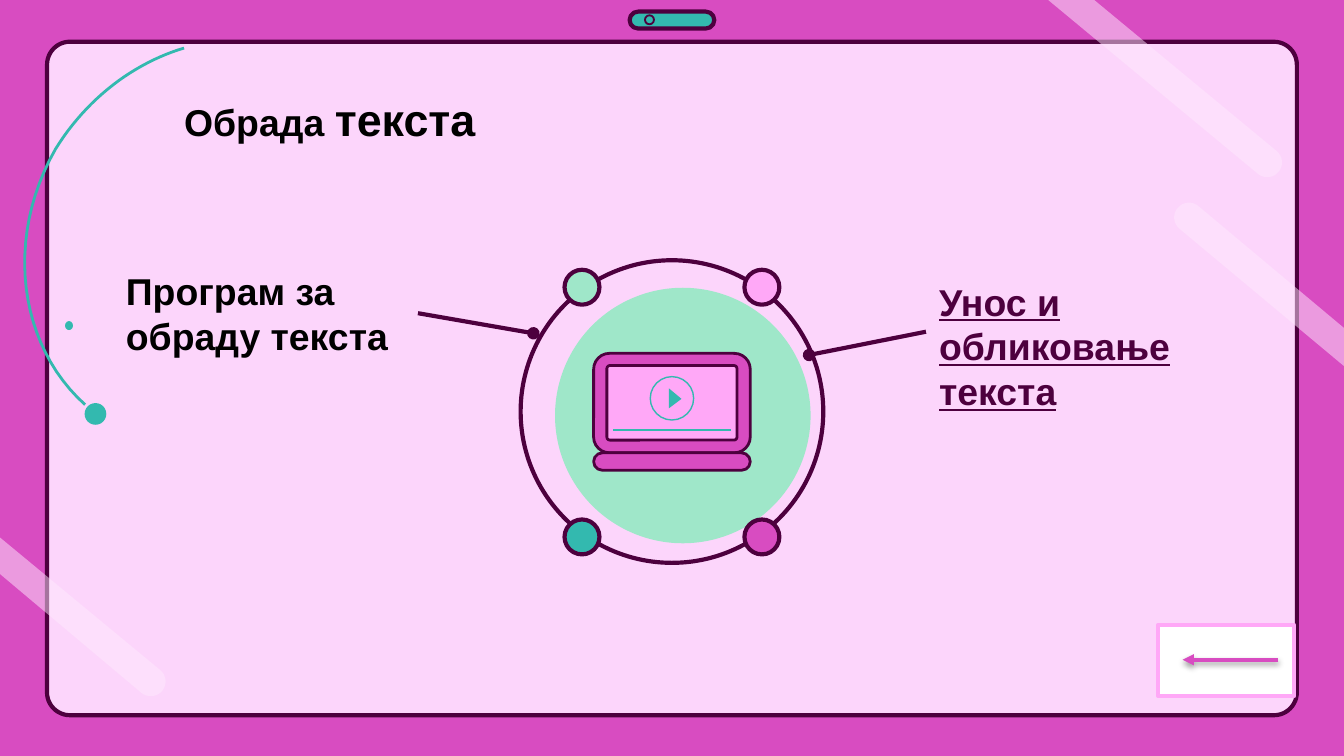
from math import atan2, cos, pi, sin

from lxml.etree import SubElement
from pptx import Presentation
from pptx.dml.color import RGBColor
from pptx.enum.shapes import MSO_CONNECTOR, MSO_SHAPE
from pptx.enum.text import MSO_ANCHOR, MSO_AUTO_SIZE, PP_ALIGN
from pptx.oxml.ns import qn
from pptx.util import Cm, Pt


class Theme:
    font = "Arial"
    body, large = 20, 24
    magenta, pale, pink = "D84CC1", "FCD5FB", "FFA8F7"
    plum, teal, mint = "4D003E", "33B9AF", "9FE7C9"
    glow, white, black = "FFE9FE", "FFFFFF", "000000"
    thin, medium, button, bold = 0.75, 1.5, 2, 2.25


# Content: all lengths in cm
SLIDE = (25.4, 14.29)
ROUND, OVAL, RECT = MSO_SHAPE.ROUNDED_RECTANGLE, MSO_SHAPE.OVAL, MSO_SHAPE.RECTANGLE

# Rows: preset, box, fill, line colour, line width, corner
WINDOW = [
    (ROUND, (0.89, 0.79, 23.62, 12.73), Theme.pale, Theme.plum, Theme.bold, 0.034),
    (ROUND, (11.9, 0.22, 1.6, 0.32), Theme.teal, Theme.plum, Theme.bold, 0.5),
    (OVAL, (12.19, 0.29, 0.17, 0.17), None, Theme.plum, 1, None),
    (OVAL, (1.23, 6.07, 0.15, 0.17), Theme.teal, None, 0, None),
    (OVAL, (1.6, 7.62, 0.41, 0.41), Theme.teal, None, 0, None),
]
EMBLEM = [
    (OVAL, (10.49, 5.44, 4.83, 4.83), Theme.mint, None, 0, None),
    (OVAL, (9.84, 4.92, 5.72, 5.72), None, Theme.plum, Theme.bold, None),
    (ROUND, (11.22, 6.68, 2.96, 1.88), Theme.magenta, Theme.plum, Theme.medium, 0.16),
    (ROUND, (11.47, 6.91, 2.46, 1.41), Theme.pink, Theme.plum, Theme.medium, 0.04),
    (OVAL, (12.29, 7.12, 0.82, 0.82), None, Theme.teal, Theme.thin, None),
    (ROUND, (11.22, 8.56, 2.96, 0.33), Theme.magenta, Theme.plum, Theme.medium, 0.5),
]
BACK_BUTTON = (RECT, (21.89, 11.81, 2.57, 1.35), Theme.white, Theme.pink, Theme.button, None)
PLAY_MARK = [(12.64, 7.34), (12.64, 7.72), (12.88, 7.54)]

# Corner dots around the ring, row by row
DOT_SIZE, DOT_CENTRE, DOT_REACH = 0.66, (12.7, 7.79), (1.7, 2.36)
DOT_FILLS = [[Theme.mint, Theme.pink], [Theme.teal, Theme.magenta]]

# Two Bezier pieces of the orbit
ORBIT = [
    [(3.48, 0.91), (2.54, 1.19), (1.65, 1.85), (1.05, 2.82)],
    [(1.05, 2.82), (0.08, 4.52), (0.36, 6.53), (1.61, 7.65)],
]

# Light streaks: first edge point, cap centre, last edge point
STREAK_RADIUS = 0.28
STREAKS = [
    ((19.81, 0), (23.95, 3.07), (20.68, 0)),
    ((0, 10.85), (2.85, 12.88), (0, 10.16)),
    ((25.4, 6.2), (22.47, 4.11), (25.4, 6.92)),
]

PROGRAM = ((2.13, 5.03, 5.77, 1.78), [("Програм за обраду текста", Theme.body)])
EDITING = ((17.5, 5.36, 5.77, 2.36), [("Унос и обликовање текста", Theme.body)])
TITLE = ((3.23, 1.6, 15.54, 1.27), [("Обрада ", Theme.body), ("текста", Theme.large)])

presentation = Presentation()
presentation.slide_width, presentation.slide_height = map(Cm, SLIDE)
slide = presentation.slides.add_slide(presentation.slide_layouts[6])
slide.background.fill.solid()
slide.background.fill.fore_color.rgb = RGBColor.from_string(Theme.magenta)


def paint(shape, fill, line, width):
    shape.shadow.inherit = False
    for part, colour in ((shape.fill, fill), (shape.line.fill, line)):
        if colour:
            part.solid()
            part.fore_color.rgb = RGBColor.from_string(colour)
        else:
            part.background()
    if line:
        shape.line.width = Pt(width)
    return shape


def add_preset(preset, box, fill, line, width, corner):
    shape = slide.shapes.add_shape(preset, *map(Cm, box))
    if corner is not None:
        shape.adjustments[0] = corner
    return paint(shape, fill, line, width)


def add_outline(points, fill=None, line=None, width=0):
    corners = [(Cm(x), Cm(y)) for x, y in points]
    builder = slide.shapes.build_freeform(*corners[0])
    builder.add_line_segments(corners[1:], close=fill is not None)
    return paint(builder.convert_to_shape(), fill, line, width)


def add_line(start, end, colour, width, tail=None):
    line = slide.shapes.add_connector(MSO_CONNECTOR.STRAIGHT, *map(Cm, start + end))
    line.line.color.rgb = RGBColor.from_string(colour)
    line.line.width = Pt(width)
    if tail:
        SubElement(line.line._get_or_add_ln(), qn("a:tailEnd"), type=tail)
    SubElement(line._element.spPr, qn("a:effectLst"))
    return line


def add_text(box, runs, inset=None, **look):
    holder = slide.shapes.add_textbox(*map(Cm, box))
    frame = holder.text_frame
    frame.word_wrap = True
    if inset:
        frame.vertical_anchor = MSO_ANCHOR.MIDDLE
        for side in ("left", "right", "top", "bottom"):
            setattr(frame, f"margin_{side}", Cm(inset))
    for words, size in runs:
        run = frame.paragraphs[0].add_run()
        run.text = words
        colour = look.get("colour", Theme.black)
        run.font.color.rgb = RGBColor.from_string(colour)
        formats = {"name": Theme.font, "size": Pt(size), "bold": True,
                   "underline": look.get("underline")}
        for key, value in formats.items():
            setattr(run.font, key, value)
    return holder


def bezier(a, b, c, d, steps=24):
    for t in (step / steps for step in range(steps + 1)):
        u = 1 - t
        yield tuple(u**3 * p + 3 * u * u * t * q + 3 * u * t * t * r + t**3 * s
                    for p, q, r, s in zip(a, b, c, d))


def streak_points(first, cap, last, steps=16):
    heading = atan2(cap[1] - (first[1] + last[1]) / 2, cap[0] - (first[0] + last[0]) / 2)
    angles = [heading + pi / 2 - pi * step / steps for step in range(steps + 1)]
    arc = [(cap[0] + STREAK_RADIUS * cos(a), cap[1] + STREAK_RADIUS * sin(a)) for a in angles]
    return [first, *arc, last]


# Window, orbit and light streaks
for row in WINDOW:
    add_preset(*row)
add_outline([point for piece in ORBIT for point in bezier(*piece)],
            line=Theme.teal, width=Theme.medium)
for streak in STREAKS:
    light = add_outline(streak_points(*streak), fill=Theme.glow)
    colour = light._element.spPr.find(qn("a:solidFill"))[0]
    SubElement(colour, qn("a:alpha"), val="50000")

# Laptop emblem
for row in EMBLEM:
    add_preset(*row)
add_outline(PLAY_MARK, fill=Theme.teal)
add_line((11.59, 8.13), (13.81, 8.13), Theme.teal, Theme.thin)

# Left label and its pointer
program = add_text(*PROGRAM, inset=0.25)
pointer = add_line((7.9, 5.92), (10.08, 6.3), Theme.plum, Theme.bold, "oval")
pointer.begin_connect(program, 3)

# Corner dots
for row, fills in zip((-1, 1), DOT_FILLS):
    for column, fill in zip((-1, 1), fills):
        left = DOT_CENTRE[0] + column * DOT_REACH[0] - DOT_SIZE / 2
        top = DOT_CENTRE[1] + row * DOT_REACH[1] - DOT_SIZE / 2
        add_preset(OVAL, (left, top, DOT_SIZE, DOT_SIZE), fill, Theme.plum, Theme.bold, None)

# Back button
add_preset(*BACK_BUTTON)
back_arrow = add_line((24.16, 12.47), (22.35, 12.47), Theme.magenta, Theme.button, "triangle")
effects = back_arrow._element.spPr.find(qn("a:effectLst"))
shadow = SubElement(effects, qn("a:outerShdw"), blurRad="40000", dist="20000",
                    dir="5400000", rotWithShape="0")
shade = SubElement(shadow, qn("a:srgbClr"), val=Theme.black)
SubElement(shade, qn("a:alpha"), val="38000")

# Title, right pointer and right label
title = add_text(*TITLE)
title.text_frame.auto_size = MSO_AUTO_SIZE.SHAPE_TO_FIT_TEXT
title.text_frame.paragraphs[0].alignment = PP_ALIGN.JUSTIFY
add_line((17.5, 6.27), (15.29, 6.71), Theme.plum, Theme.bold, "oval")
add_text(*EDITING, inset=0.25, colour=Theme.plum, underline=True)

presentation.save("out.pptx")
